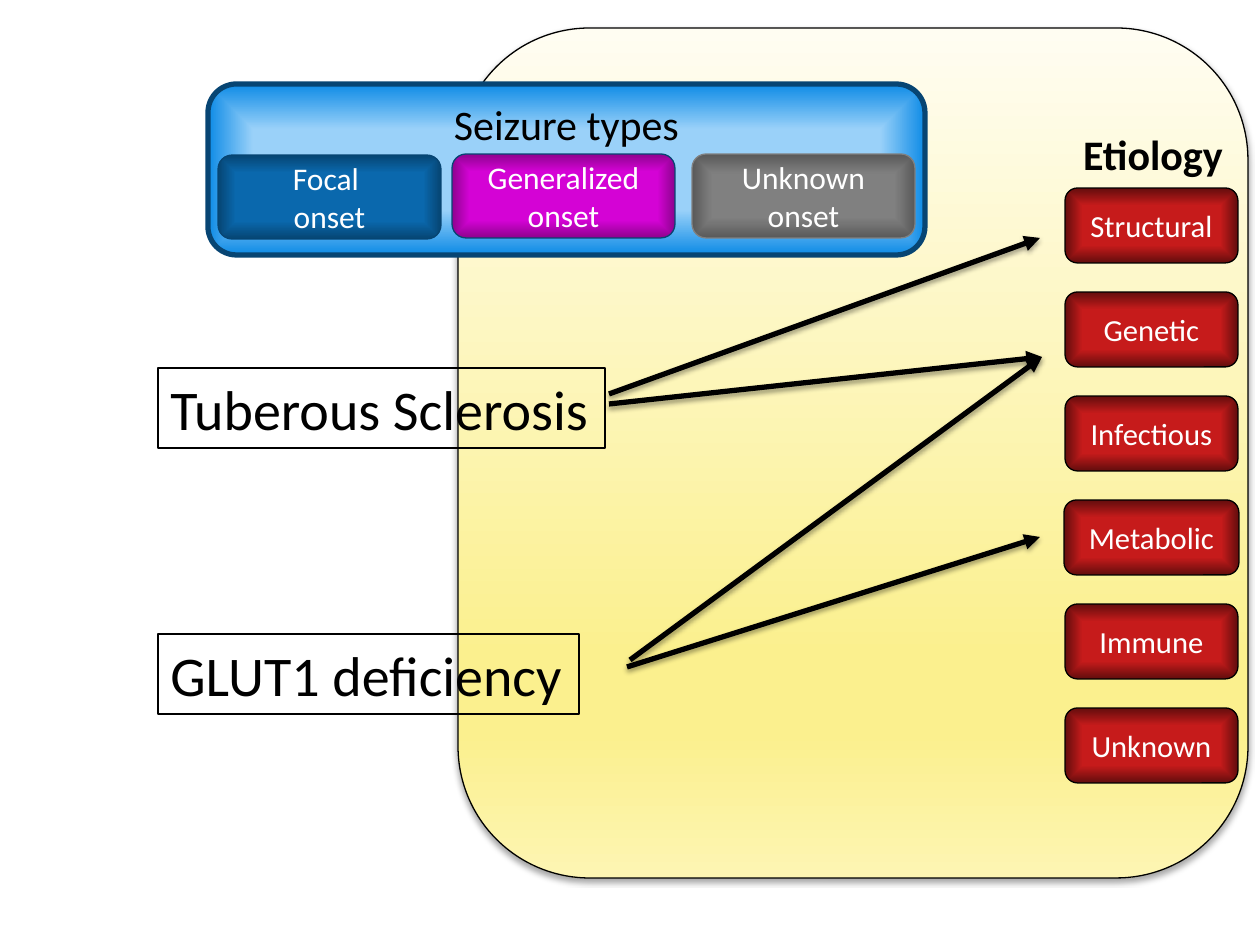
from pptx import Presentation, oxml
from pptx import util as u
from pptx.dml.color import RGBColor
from pptx.enum import shapes, text
from pptx.oxml import ns

EMU_PER_PX = 914400 / 126
BLACK, WHITE, NAVY, GRAY = "000000", "FFFFFF", "074573", "808080"
FROM_CENTER = ('<a:path path="{}"><a:fillToRect l="50000" t="50000" '
               'r="50000" b="50000"/></a:path>')
DOWNWARD = '<a:lin ang="5400000" scaled="0"/>'
GLOW = FROM_CENTER.format("shape")


def px(length):
    return u.Emu(round(length * EMU_PER_PX))


def color(hex_string):
    return RGBColor.from_string(hex_string)


def drawing_xml(tag, content="", attributes=""):
    return oxml.parse_xml(
        f'<a:{tag} {ns.nsdecls("a")} {attributes}>{content}</a:{tag}>')


def shadow_effect(opacity, distance):
    """Soft shadow straight below; opacity in percent, distance in points."""
    return drawing_xml(
        "effectLst",
        f'<a:outerShdw blurRad="{u.Pt(3.1)}" dist="{u.Pt(distance)}" '
        'dir="5400000" rotWithShape="0"><a:srgbClr val="000000">'
        f'<a:alpha val="{opacity * 1000}"/></a:srgbClr></a:outerShdw>')


class SlideBuilder:
    """Holds the font and the slide that receives each element."""

    font = "Calibri"

    def __init__(self, slide):
        self.slide = slide

    def set_text(self, frame, content, size, font_color, align, bold=False):
        frame.text = content
        for paragraph in frame.paragraphs:
            paragraph.alignment = align
            for run in paragraph.runs:
                run.font.name = self.font
                run.font.size = u.Pt(size)
                run.font.bold = bold
                run.font.color.rgb = color(font_color)

    def outline(self, shape, line_color, width):
        shape.line.color.rgb = color(line_color)
        shape.line.width = u.Pt(width)

    def panel(self, box, stops, direction, line_color=BLACK, line_width=0.75):
        """Rounded rectangle with gradient stops given as (percent, color)."""
        shape = self.slide.shapes.add_shape(
            shapes.MSO_SHAPE.ROUNDED_RECTANGLE, *map(px, box))
        shape.shadow.inherit = False
        self.outline(shape, line_color, line_width)
        stop_list = "".join(
            f'<a:gs pos="{percent * 1000}"><a:srgbClr val="{stop}"/></a:gs>'
            for percent, stop in stops)
        gradient = drawing_xml("gradFill", f"<a:gsLst>{stop_list}</a:gsLst>{direction}",
                               'rotWithShape="1"')
        shape.fill.background()
        no_fill = shape._element.spPr.find(ns.qn("a:noFill"))
        no_fill.getparent().replace(no_fill, gradient)
        return shape

    def button(self, box, label, size, stops, direction=GLOW, line_color=BLACK):
        shape = self.panel(box, stops, direction, line_color)
        shape.text_frame.word_wrap = True
        shape.text_frame.vertical_anchor = text.MSO_ANCHOR.MIDDLE
        self.set_text(shape.text_frame, label, size, WHITE, text.PP_ALIGN.CENTER)

    def label(self, box, content, size, align, wrap, bold=False):
        shape = self.slide.shapes.add_textbox(*map(px, box))
        frame = shape.text_frame
        frame.word_wrap = wrap
        frame.auto_size = text.MSO_AUTO_SIZE.SHAPE_TO_FIT_TEXT
        self.set_text(frame, content, size, BLACK, align, bold)
        return shape

    def arrow(self, start, end):
        connector = self.slide.shapes.add_connector(
            shapes.MSO_CONNECTOR.STRAIGHT, *map(px, start + end))
        self.outline(connector, BLACK, 3)
        properties = connector._element.spPr
        properties.find(ns.qn("a:ln")).append(
            drawing_xml("tailEnd", attributes='type="triangle"'))
        properties.append(shadow_effect(38, 1.6))


def main():
    presentation = Presentation()
    presentation.slide_width, presentation.slide_height = px(1260), px(945)
    blank_layout = presentation.slide_layouts[6]
    builder = SlideBuilder(presentation.slides.add_slide(blank_layout))

    etiology_panel = builder.panel(
        (458, 28, 790, 850),
        [(0, "FFFDF2"), (74, "FBF08E"), (83, "FBF08E"), (100, "FDF5B3")], DOWNWARD)
    properties = etiology_panel._element.spPr
    properties.replace(properties.find(ns.qn("a:effectLst")), shadow_effect(35, 1.8))
    builder.label((1040, 122, 226, 63), "Etiology", 24,
                  text.PP_ALIGN.CENTER, wrap=True, bold=True)

    for top, width, disease in [(368, 447, "Tuberous Sclerosis"),
                                (634, 421, "GLUT1 deficiency")]:
        box = builder.label((158, top, width, 80), disease, 32,
                            text.PP_ALIGN.LEFT, wrap=False)
        builder.outline(box, BLACK, 0.75)

    structural, genetic, metabolic = (1040, 238), (1042, 357), (1040, 537)
    for start, end in [((609, 394), structural), ((609, 404), genetic),
                       ((630, 660), genetic), ((627, 667), metabolic)]:
        builder.arrow(start, end)

    etiologies = ["Structural", "Genetic", "Infectious",
                  "Metabolic", "Immune", "Unknown"]
    for row, etiology in enumerate(etiologies):
        extra = 1 if etiology == "Metabolic" else 0
        builder.button((1065 - extra, 188 + 104 * row, 173 + 2 * extra, 75),
                       etiology, 17.5, [(53, "C61B1B"), (100, "630D0D")])

    seizure_panel = builder.panel((208, 84, 717, 171),
                                  [(47, "9AD1F9"), (100, "0D8BE6")], GLOW, NAVY, 3)
    seizure_panel.text_frame.vertical_anchor = text.MSO_ANCHOR.TOP
    builder.set_text(seizure_panel.text_frame, "Seizure types", 24, BLACK,
                     text.PP_ALIGN.CENTER)

    for left, top, onset, stops, direction, line_color in [
            (452, 154, "Generalized onset", [(58, "D403D5"), (100, "8F038F")],
             GLOW, NAVY),
            (692, 154, "Unknown onset", [(51, GRAY), (100, "595959")],
             FROM_CENTER.format("rect"), GRAY),
            (218, 155, "Focal \nonset", [(57, "0A68AD"), (100, "064573")],
             GLOW, NAVY)]:
        builder.button((left, top, 223, 84), onset, 18, stops, direction, line_color)

    presentation.save("out.pptx")


if __name__ == "__main__":
    main()
